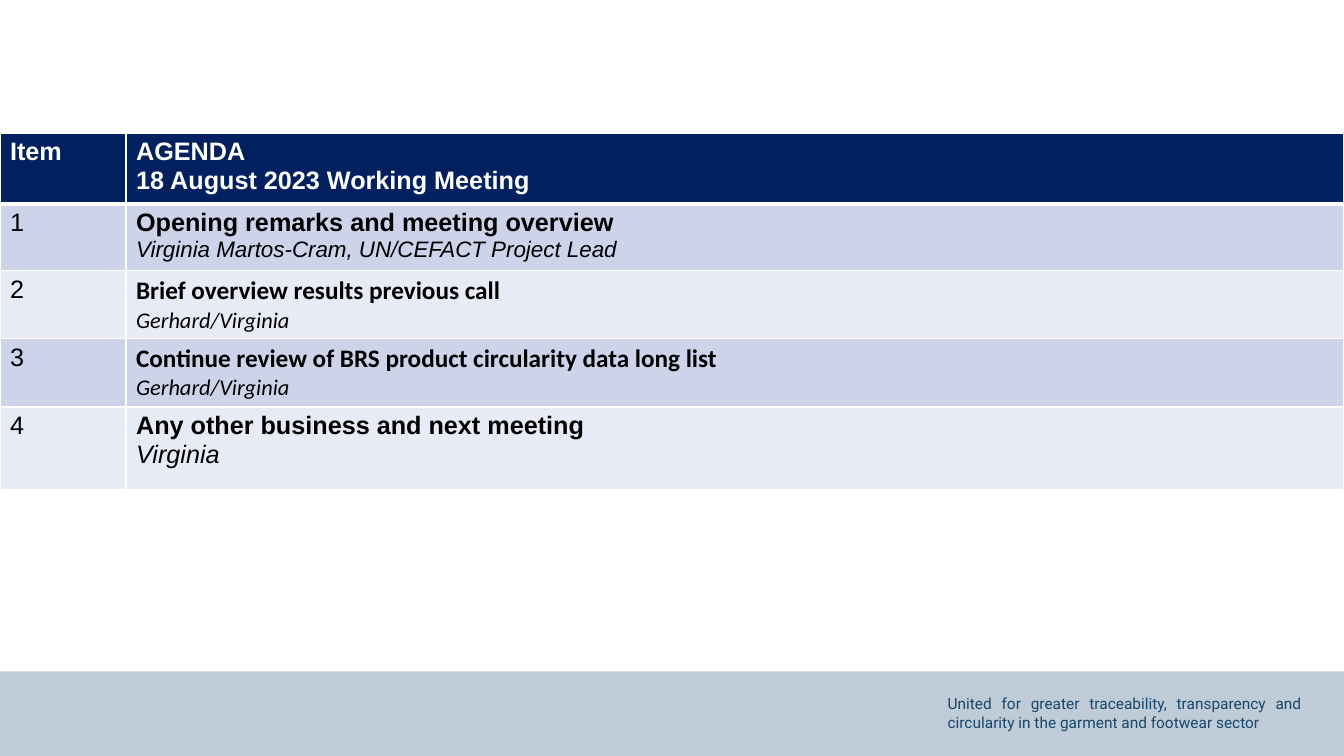
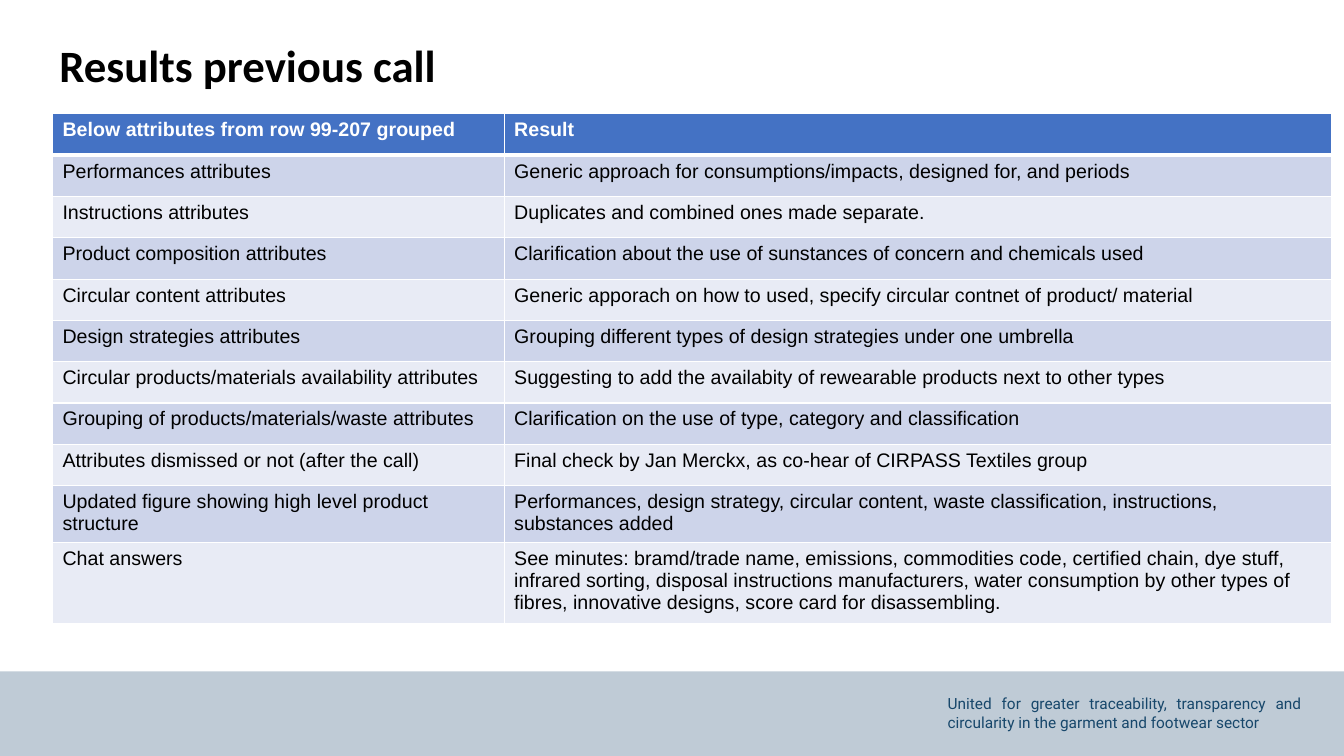
from dataclasses import dataclass

from lxml import etree
from pptx import Presentation
from pptx.dml.color import RGBColor
from pptx.enum.shapes import MSO_SHAPE
from pptx.enum.text import MSO_ANCHOR, PP_ALIGN
from pptx.oxml.ns import qn
from pptx.slide import Slide
from pptx.table import _Cell
from pptx.text.text import TextFrame
from pptx.util import Pt

PX = 9144  # EMU per px, 100 px to the inch
SLIDE_W, SLIDE_H = 1333, 750
BAND_TOP = 666

RECTANGLE = MSO_SHAPE.RECTANGLE
MIDDLE = MSO_ANCHOR.MIDDLE
LEFT, JUSTIFY = PP_ALIGN.LEFT, PP_ALIGN.JUSTIFY

WHITE = RGBColor(0xFF, 0xFF, 0xFF)
BLACK = RGBColor(0x00, 0x00, 0x00)
BAND_GREY = RGBColor(0xBF, 0xCB, 0xD6)
FOOTER_BLUE = RGBColor(0x17, 0x47, 0x6B)
NAVY = RGBColor(0x00, 0x20, 0x60)
BLUE = RGBColor(0x44, 0x72, 0xC4)
ROW_TINTS = (RGBColor(0xCD, 0xD4, 0xEA), RGBColor(0xE8, 0xEB, 0xF5))

BODY_FONT, TITLE_FONT, FOOTER_FONT = "Arial", "Calibri", "Roboto"
FOOTER = ("United for greater traceability, transparency and "
          "circularity in the garment and footwear sector")


@dataclass(frozen=True)
class Line:
    text: str
    size: int
    bold: bool = False
    italic: bool = False
    font: str = BODY_FONT


@dataclass(frozen=True)
class TableStyle:
    left: int
    top: int
    columns: tuple[int, ...]
    rows: tuple[int, ...]
    header_fill: RGBColor


@dataclass(frozen=True)
class AgendaItem:
    topic: str
    speaker: str
    font: str = BODY_FONT
    speaker_size: int = 16


AGENDA_STYLE = TableStyle(0, 132, (125, 1208), (70, 65, 67, 68, 82), NAVY)
AGENDA_HEADER = ("AGENDA", "18 August 2023 Working Meeting")
AGENDA = (
    AgendaItem("Opening remarks and meeting overview",
               "Virginia Martos-Cram, UN/CEFACT Project Lead"),
    AgendaItem("Brief overview results previous call", "Gerhard/Virginia", TITLE_FONT),
    AgendaItem("Continue review of BRS product circularity data long list",
               "Gerhard/Virginia", TITLE_FONT),
    AgendaItem("Any other business and next meeting", "Virginia", speaker_size=18),
)

RESULTS_STYLE = TableStyle(52, 113, (448, 821), (41,) * 9 + (53, 75), BLUE)
RESULTS = (
    ("Below attributes from row 99-207 grouped", "Result"),
    ("Performances attributes",
     "Generic approach for consumptions/impacts, designed for, and periods"),
    ("Instructions attributes", "Duplicates and combined ones made separate."),
    ("Product composition attributes",
     "Clarification about the use of sunstances of concern and chemicals used"),
    ("Circular content attributes",
     "Generic apporach on how to used, specify circular contnet of product/ material"),
    ("Design strategies attributes",
     "Grouping different types of design strategies under one umbrella"),
    ("Circular products/materials availability attributes",
     "Suggesting to add the availabity of rewearable products next to other types"),
    ("Grouping of products/materials/waste attributes",
     "Clarification on the use of type, category and classification"),
    ("Attributes dismissed or not (after the call)",
     "Final check by Jan Merckx, as co-hear of CIRPASS Textiles group"),
    ("Updated figure showing high level product structure",
     "Performances, design strategy, circular content, waste classification, "
     "instructions, substances added"),
    ("Chat answers",
     "See minutes: bramd/trade name, emissions, commodities code, certified chain, "
     "dye stuff, infrared sorting, disposal instructions manufacturers, water "
     "consumption by other types of fibres, innovative designs, score card for "
     "disassembling."),
)


def write(frame: TextFrame, text: str, *, size: int, font: str = BODY_FONT,
          color: RGBColor = BLACK, bold: bool = False, italic: bool = False,
          align: PP_ALIGN = LEFT, spacing: float = 1.0) -> None:
    """Fill the empty first paragraph, or add one below the text."""
    first = frame.paragraphs[0]
    paragraph = frame.add_paragraph() if first.runs else first
    paragraph.alignment = align
    paragraph.line_spacing = spacing
    run = paragraph.add_run()
    run.text = text
    run.font.size = Pt(size)
    run.font.name = font
    run.font.color.rgb = color
    run.font.bold = bold
    run.font.italic = italic


def add_text_frame(slide: Slide, left: int, top: int, width: int, height: int) -> TextFrame:
    box = slide.shapes.add_textbox(left * PX, top * PX, width * PX, height * PX)
    box.text_frame.word_wrap = True
    return box.text_frame


def add_base_slide(deck: Presentation) -> Slide:
    """Blank slide with the footer band and its motto."""
    slide = deck.slides.add_slide(deck.slide_layouts[6])
    band = slide.shapes.add_shape(RECTANGLE, 0, BAND_TOP * PX, SLIDE_W * PX,
                                  (SLIDE_H - BAND_TOP) * PX)
    band.shadow.inherit = False
    band.fill.solid()
    band.fill.fore_color.rgb = BAND_GREY
    band.line.fill.background()
    motto = add_text_frame(slide, 930, 684, 371, 47)
    write(motto, FOOTER, size=11, font=FOOTER_FONT, color=FOOTER_BLUE, align=JUSTIFY)
    return slide


def add_title(slide: Slide, text: str) -> None:
    frame = add_text_frame(slide, 49, 22, 828, 91)
    frame.vertical_anchor = MIDDLE
    write(frame, text, size=32, font=TITLE_FONT, bold=True, spacing=0.9)


def set_borders(cell: _Cell, top: int, bottom: int) -> None:
    """White cell edges; top and bottom widths in points."""
    properties = cell._tc.get_or_add_tcPr()
    for edge, width in (("L", 1), ("R", 1), ("T", top), ("B", bottom)):
        line = etree.SubElement(properties, qn(f"a:ln{edge}"), w=str(Pt(width)))
        fill = etree.SubElement(line, qn("a:solidFill"))
        etree.SubElement(fill, qn("a:srgbClr"), val=str(WHITE))


def add_banded_table(slide: Slide, style: TableStyle,
                     rows: list[list[list[Line]]]) -> None:
    table = slide.shapes.add_table(
        len(style.rows), len(style.columns), style.left * PX, style.top * PX,
        sum(style.columns) * PX, sum(style.rows) * PX).table
    for column, width in zip(table.columns, style.columns):
        column.width = width * PX
    for row, height in zip(table.rows, style.rows):
        row.height = height * PX
    for r, row_cells in enumerate(rows):
        header = r == 0
        for c, lines in enumerate(row_cells):
            cell = table.cell(r, c)
            set_borders(cell, top=3 if r == 1 else 1, bottom=3 if header else 1)
            cell.fill.solid()
            cell.fill.fore_color.rgb = style.header_fill if header else ROW_TINTS[(r - 1) % 2]
            for line in lines:
                write(cell.text_frame, line.text, size=line.size, font=line.font,
                      bold=line.bold, italic=line.italic, color=WHITE if header else BLACK)


def build_agenda(deck: Presentation) -> None:
    rows = [[[Line("Item", 18, bold=True)],
             [Line(text, 18, bold=True) for text in AGENDA_HEADER]]]
    for number, item in enumerate(AGENDA, start=1):
        rows.append([[Line(str(number), 18)],
                     [Line(item.topic, 18, bold=True, font=item.font),
                      Line(item.speaker, item.speaker_size, italic=True, font=item.font)]])
    add_banded_table(add_base_slide(deck), AGENDA_STYLE, rows)


def build_results(deck: Presentation) -> None:
    slide = add_base_slide(deck)
    add_title(slide, "Results previous call")
    rows = [[[Line(text, 14, bold=r == 0)] for text in texts]
            for r, texts in enumerate(RESULTS)]
    add_banded_table(slide, RESULTS_STYLE, rows)


def main() -> None:
    deck = Presentation()
    deck.slide_width = SLIDE_W * PX
    deck.slide_height = SLIDE_H * PX
    build_agenda(deck)
    build_results(deck)
    deck.save("out.pptx")


if __name__ == "__main__":
    main()
